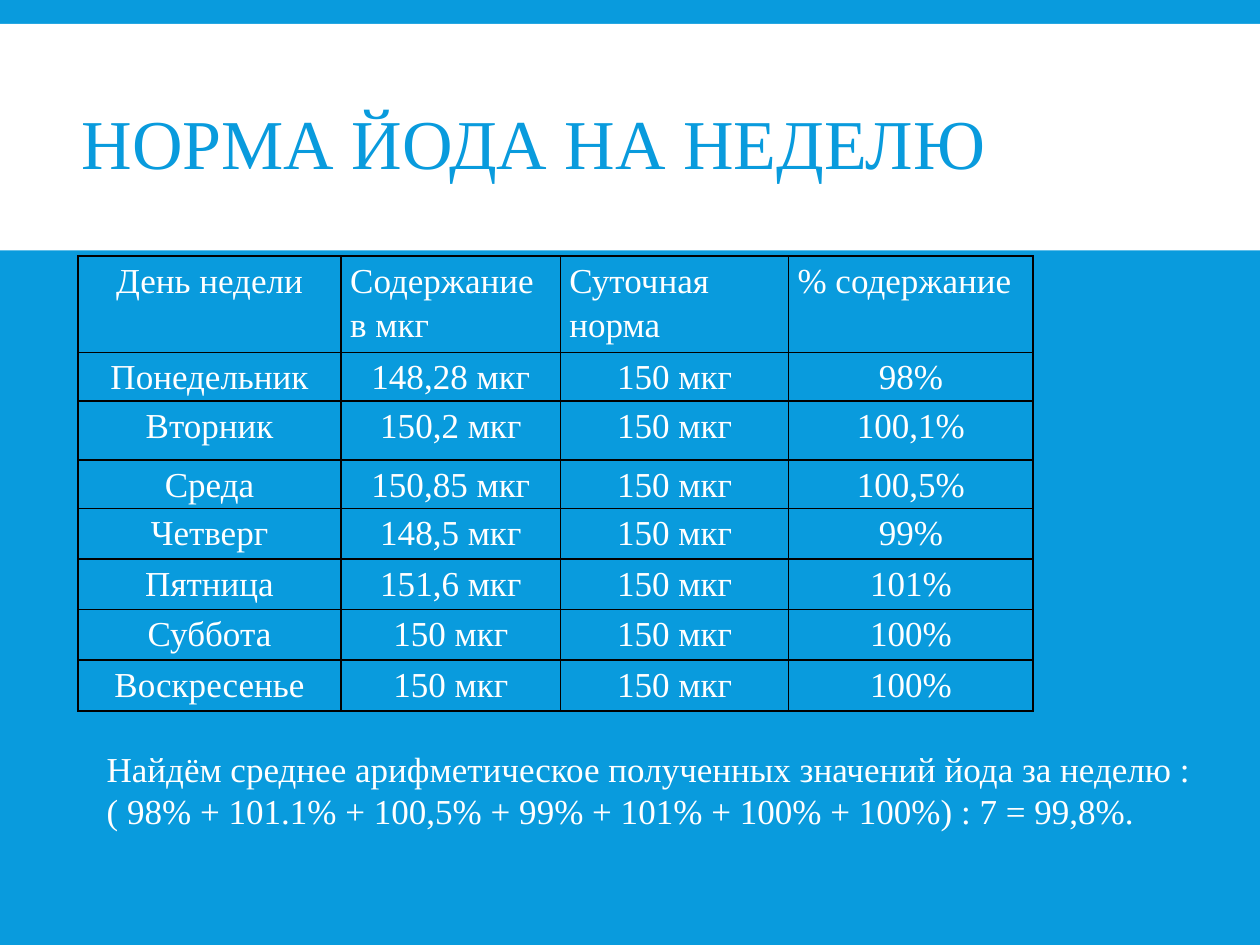
from collections import namedtuple
from dataclasses import dataclass

from lxml.etree import SubElement
from pptx import Presentation
from pptx.dml.color import RGBColor
from pptx.enum.shapes import MSO_SHAPE as Shape
from pptx.enum.text import MSO_ANCHOR as Anchor, PP_ALIGN as Align
from pptx.oxml.ns import qn
from pptx.util import Cm, Pt

Box = namedtuple("Box", "left top width height")


@dataclass(frozen=True)
class Theme:
    blue: str = "099BDD"
    white: str = "FFFFFF"
    black: str = "000000"
    font: str = "Times New Roman"
    title_size: int = 40
    body_size: int = 20
    border_width: int = 1


THEME = Theme()
COLUMN_WIDTHS = [5.31, 4.42, 4.6, 4.93]
ROW_HEIGHTS = [0.86, 0.89, 1.19, 0.64] + [1.02] * 4
HEADERS = ["День недели", "Содержание в мкг", "Суточная норма", "% содержание"]
DAILY_NORM = "150 мкг"
DAYS = [
    ("Понедельник", "148,28 мкг", "98%"),
    ("Вторник", "150,2 мкг", "100,1%"),
    ("Среда", "150,85 мкг", "100,5%"),
    ("Четверг", "148,5 мкг", "99%"),
    ("Пятница", "151,6 мкг", "101%"),
    ("Суббота", "150 мкг", "100%"),
    ("Воскресенье", "150 мкг", "100%"),
]
AVERAGE_LINES = [
    "Найдём среднее арифметическое полученных значений йода за неделю :",
    "( 98% + 101.1% + 100,5% + 99% + 101% + 100% + 100%) : 7 = 99,8%.",
]


def write_text(frame, *lines, size=THEME.body_size, color=THEME.white,
               align=Align.LEFT, spacing=1.0):
    """Fill a text frame, one paragraph for each line."""
    frame.word_wrap = True
    for index, line in enumerate(lines):
        para = frame.add_paragraph() if index else frame.paragraphs[0]
        para.alignment = align
        para.line_spacing = spacing
        span = para.add_run()
        span.text = line
        span.font.name = THEME.font
        span.font.size = Pt(size)
        span.font.color.rgb = RGBColor.from_string(color)


def add_header(page, box):
    band = page.shapes.add_shape(Shape.RECTANGLE, *map(Cm, box))
    band.shadow.inherit = False
    band.fill.solid()
    band.fill.fore_color.rgb = RGBColor.from_string(THEME.white)
    band.line.fill.background()

    title = page.shapes.add_textbox(
        Cm(box.left + 1.4), Cm(box.top + 0.92), Cm(21.26), Cm(3.18))
    title.text_frame.vertical_anchor = Anchor.MIDDLE
    write_text(title.text_frame, "НОРМА ЙОДА НА НЕДЕЛЮ",
               size=THEME.title_size, color=THEME.blue, spacing=0.85)


def style_cell(cell):
    """Give a cell narrow margins, black borders and no fill."""
    cell.margin_left = cell.margin_right = Cm(0.18)
    cell.margin_top = cell.margin_bottom = 0
    properties = cell._tc.get_or_add_tcPr()
    for side in ("lnL", "lnR", "lnT", "lnB"):
        border = SubElement(properties, qn(f"a:{side}"),
                            w=str(Pt(THEME.border_width)))
        fill = SubElement(border, qn("a:solidFill"))
        SubElement(fill, qn("a:srgbClr"), val=THEME.black)
    cell.fill.background()


def add_iodine_table(page, box):
    rows = [HEADERS] + [(day, amount, DAILY_NORM, share)
                        for day, amount, share in DAYS]
    table = page.shapes.add_table(
        len(rows), len(HEADERS), *map(Cm, box)).table
    table.first_row = table.horz_banding = False
    for column, width in zip(table.columns, COLUMN_WIDTHS):
        column.width = Cm(width)
    for row, height in zip(table.rows, ROW_HEIGHTS):
        row.height = Cm(height)
    for r, values in enumerate(rows):
        for c, value in enumerate(values):
            cell = table.cell(r, c)
            style_cell(cell)
            align = Align.LEFT if r == 0 and c > 0 else Align.CENTER
            write_text(cell.text_frame, value, align=align, spacing=1.15)


def add_average(page, box):
    note = page.shapes.add_textbox(*map(Cm, box))
    write_text(note.text_frame, *AVERAGE_LINES)


def main():
    deck = Presentation()
    deck.slide_width, deck.slide_height = Cm(25.4), Cm(19.05)
    page = deck.slides.add_slide(deck.slide_layouts[6])
    page.background.fill.solid()
    page.background.fill.fore_color.rgb = RGBColor.from_string(THEME.blue)

    add_header(page, Box(0, 0.48, 25.4, 4.57))
    add_iodine_table(
        page, Box(1.57, 5.16, sum(COLUMN_WIDTHS), sum(ROW_HEIGHTS)))
    add_average(page, Box(1.9, 14.94, 23.01, 1.96))
    deck.save("out.pptx")


if __name__ == "__main__":
    main()
